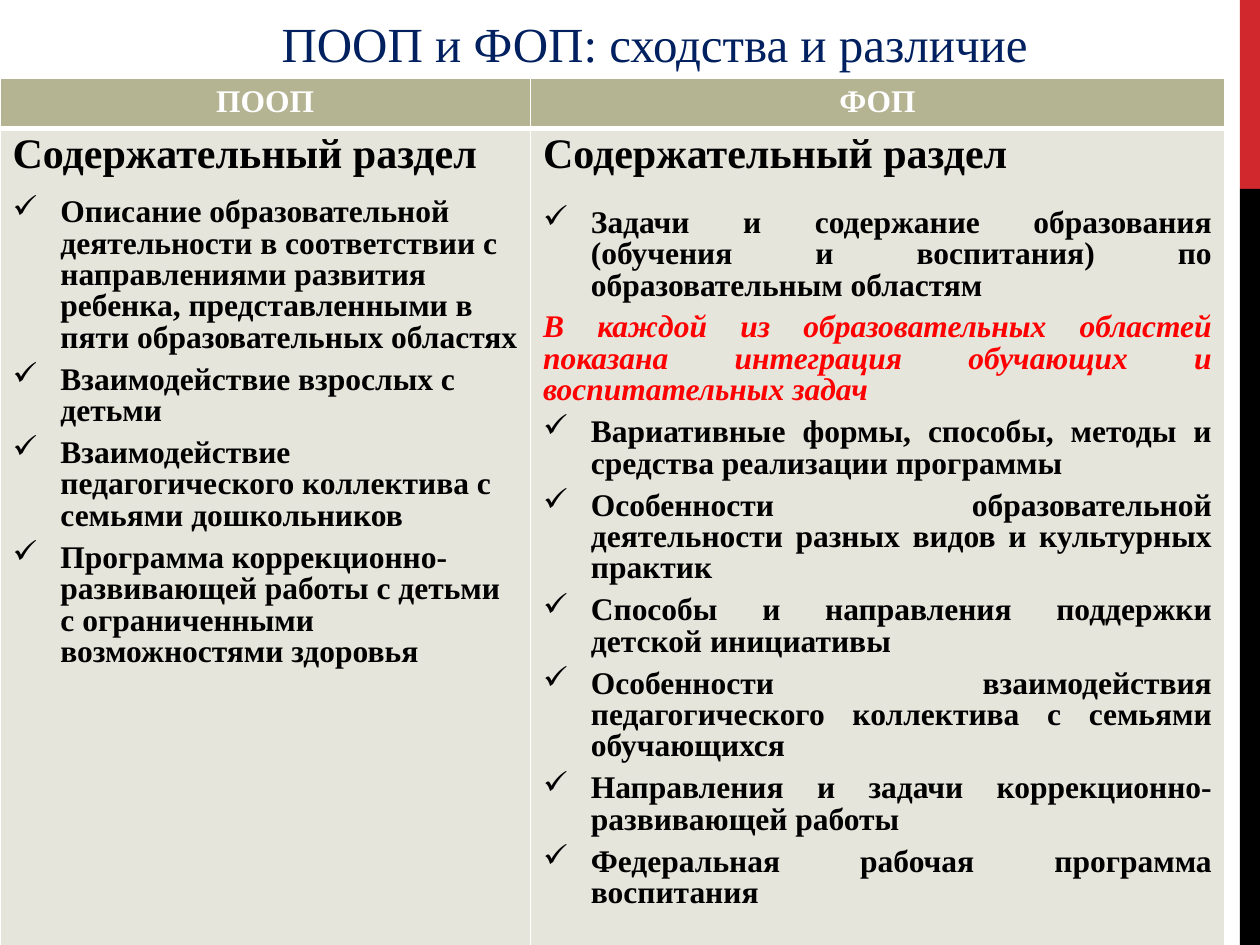
from lxml.etree import SubElement
from pptx import Presentation
from pptx.dml.color import RGBColor
from pptx.enum.shapes import MSO_SHAPE as Shape
from pptx.enum.text import MSO_AUTO_SIZE as AutoSize, PP_ALIGN as Align
from pptx.oxml.ns import qn
from pptx.util import Inches, Pt

FONT = "Times New Roman"
WHITE, BLACK, RED = "FFFFFF", "000000", "FF0000"
HEADER_FILL, BODY_FILL = "B4B392", "E5E5DC"
SECTION = "Содержательный раздел"
HEADERS = ["ПООП", "ФОП"]
PROGRAM_ITEMS = [
    "Описание образовательной деятельности в соответствии с направлениями развития ребенка, "
    "представленными в пяти образовательных областях",
    "Взаимодействие взрослых с детьми",
    "Взаимодействие педагогического коллектива с семьями дошкольников",
    "Программа коррекционно-развивающей работы с детьми с ограниченными возможностями здоровья",
]
FEDERAL_FIRST = "Задачи и содержание образования (обучения и воспитания) по образовательным областям"
FEDERAL_NOTE = ("В каждой из образовательных областей показана интеграция обучающих "
                "и воспитательных задач")
FEDERAL_ITEMS = [
    "Вариативные формы, способы, методы и средства реализации программы",
    "Особенности образовательной деятельности разных видов и культурных практик",
    "Способы и направления поддержки детской инициативы",
    "Особенности взаимодействия педагогического коллектива с семьями обучающихся",
    "Направления и задачи коррекционно-развивающей работы",
    "Федеральная рабочая программа воспитания",
]
HEADING_FORMAT = {"alignment": Align.JUSTIFY, "line_spacing": 0.9, "space_after": Pt(12)}
PROGRAM_FORMAT = {"alignment": Align.LEFT, "line_spacing": 0.9, "space_after": Pt(6)}
FEDERAL_FORMAT = {"alignment": Align.JUSTIFY, "line_spacing": 0.9, "space_before": Pt(6)}


def color(value):
    return RGBColor.from_string(value)


def set_attributes(target, values):
    for name, value in values.items():
        setattr(target, name, value)


def write(paragraph, text, size, text_color, layout, bold=True, italic=False):
    set_attributes(paragraph, layout)
    run = paragraph.add_run()
    run.text = text
    set_attributes(run.font, {"name": FONT, "size": Pt(size), "bold": bold, "italic": italic})
    run.font.color.rgb = color(text_color)


def add_check(paragraph):
    properties = paragraph._p.get_or_add_pPr()
    properties.set("marL", str(Inches(0.38)))
    properties.set("indent", str(-Inches(0.38)))
    SubElement(properties, qn("a:buChar"), char="✓")


def add_bar(slide, top, height, fill):
    bar = slide.shapes.add_shape(Shape.RECTANGLE, Inches(9.84), Inches(top),
                                 Inches(0.16), Inches(height))
    bar.shadow.inherit = False
    bar.fill.solid()
    bar.fill.fore_color.rgb = color(fill)
    bar.line.fill.background()


def add_title(slide, text):
    box = slide.shapes.add_textbox(Inches(0.51), Inches(0.06), Inches(9.37), Inches(0.57))
    set_attributes(box.text_frame, {"word_wrap": True, "auto_size": AutoSize.SHAPE_TO_FIT_TEXT})
    write(box.text_frame.paragraphs[0], text, 28, "002060", {"alignment": Align.CENTER}, bold=False)


def style_cell(cell, fill, top, bottom):
    properties = cell._tc.get_or_add_tcPr()
    for side, width in {"L": 1, "R": 1, "T": top, "B": bottom}.items():
        line = SubElement(properties, qn(f"a:ln{side}"), w=str(Pt(width)))
        solid = SubElement(line, qn("a:solidFill"))
        SubElement(solid, qn("a:srgbClr"), val=WHITE)
    cell.fill.solid()
    cell.fill.fore_color.rgb = color(fill)


def add_items(frame, items, layout):
    for item in items:
        paragraph = frame.add_paragraph()
        write(paragraph, item, 18, BLACK, layout)
        add_check(paragraph)


def add_comparison(slide):
    table = slide.shapes.add_table(2, 2, 0, Inches(0.62), Inches(9.72), Inches(6.89)).table
    for column, width in zip(table.columns, (4.21, 5.51)):
        column.width = Inches(width)
    for row, height in zip(table.rows, (0.39, 6.5)):
        row.height = Inches(height)
    for index, header in enumerate(HEADERS):
        head, body = table.cell(0, index), table.cell(1, index)
        style_cell(head, HEADER_FILL, 1, 3)
        style_cell(body, BODY_FILL, 3, 1)
        write(head.text_frame.paragraphs[0], header, 18, WHITE, {"alignment": Align.CENTER})
        write(body.text_frame.paragraphs[0], SECTION, 24, BLACK, HEADING_FORMAT)
    program, federal = (table.cell(1, index).text_frame for index in range(2))
    add_items(program, PROGRAM_ITEMS, PROGRAM_FORMAT)
    add_items(federal, [FEDERAL_FIRST], FEDERAL_FORMAT)
    write(federal.add_paragraph(), FEDERAL_NOTE, 18, RED, FEDERAL_FORMAT, italic=True)
    add_items(federal, FEDERAL_ITEMS, FEDERAL_FORMAT)


def main():
    presentation = Presentation()
    set_attributes(presentation, {"slide_width": Inches(10), "slide_height": Inches(7.5)})
    slide = presentation.slides.add_slide(presentation.slide_layouts[6])
    add_bar(slide, 0, 1.5, "D1282E")
    add_bar(slide, 1.5, 6, BLACK)
    add_title(slide, "ПООП и ФОП: сходства и различие")
    add_comparison(slide)
    presentation.save("out.pptx")


if __name__ == "__main__":
    main()
